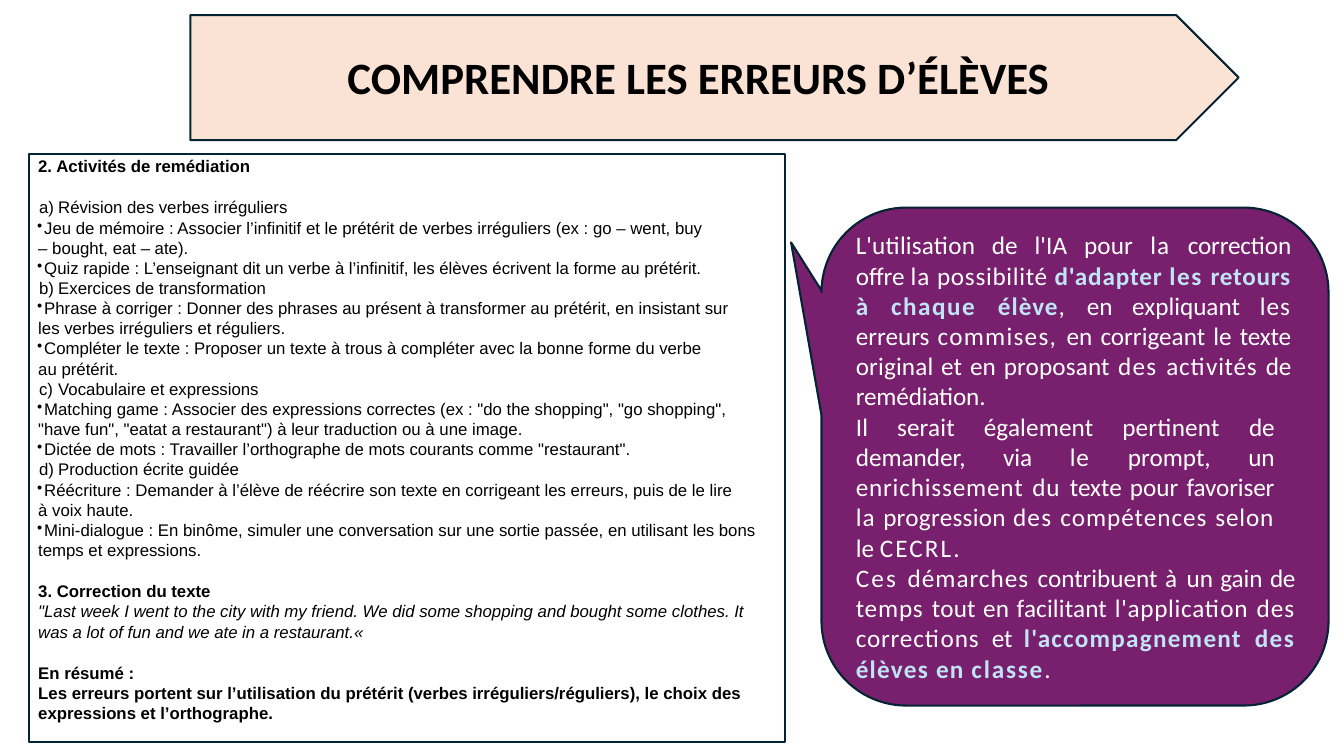
from lxml.etree import SubElement
from pptx import Presentation
from pptx.dml.color import RGBColor
from pptx.enum.shapes import MSO_SHAPE
from pptx.enum.text import MSO_ANCHOR, MSO_AUTO_SIZE, PP_ALIGN
from pptx.oxml.ns import qn
from pptx.util import Pt

COLOURS = {
    "ink": "000000", "outline": "042333", "peach": "FAE2D5",
    "purple": "781F6D", "white": "FFFFFF", "sky": "C1E4F5",
}

# Left panel: (kind, text, space before, right margin, number or letter position)
ACTIVITIES = [
    ("section", "Activités de remédiation", 0, 0, 2),
    ("letter", "Révision des verbes irréguliers", 15, 0, 1),
    ("bullet", "Jeu de mémoire : Associer l’infinitif et le prétérit de verbes irréguliers "
               "(ex : go – went, buy – bought, eat – ate).", 0, 44, 0),
    ("bullet", "Quiz rapide : L’enseignant dit un verbe à l’infinitif, les élèves écrivent "
               "la forme au prétérit.", 0, 0, 0),
    ("letter", "Exercices de transformation", 0, 0, 2),
    ("bullet", "Phrase à corriger : Donner des phrases au présent à transformer au prétérit, "
               "en insistant sur les verbes irréguliers et réguliers.", 0, 24, 0),
    ("bullet", "Compléter le texte : Proposer un texte à trous à compléter avec la bonne "
               "forme du verbe au prétérit.", 0, 44, 0),
    ("letter", "Vocabulaire et expressions", 0, 0, 3),
    ("bullet", "Matching game : Associer des expressions correctes (ex : \"do the shopping\", "
               "\"go shopping\", \"have fun\", \"eatat a restaurant\") à leur traduction ou à "
               "une image.", 0, 18, 0),
    ("bullet", "Dictée de mots : Travailler l’orthographe de mots courants comme "
               "\"restaurant\".", 0, 0, 0),
    ("letter", "Production écrite guidée", 0, 0, 4),
    ("bullet", "Réécriture : Demander à l’élève de réécrire son texte en corrigeant les "
               "erreurs, puis de le lire à voix haute.", 0, 24, 0),
    ("bullet", "Mini-dialogue : En binôme, simuler une conversation sur une sortie passée, "
               "en utilisant les bons temps et expressions.", 0, 0, 0),
    ("bold", "3. Correction du texte", 15, 0, 0),
    ("italic", "\"Last week I went to the city with my friend. We did some shopping and bought "
               "some clothes. It was a lot of fun and we ate in a restaurant.«", 0, 0, 0),
    ("bold", "En résumé :", 15, 0, 0),
    ("bold", "Les erreurs portent sur l’utilisation du prétérit (verbes irréguliers/réguliers), "
             "le choix des expressions et l’orthographe.", 0, 0, 0),
]

# Callout: (right margin, [(text, letter spacing, highlighted)])
BENEFITS = [
    (3, [("L'utilisation de l'IA pour ", 0.1, False), ("la ", 0.7, False),
         ("correction ", -0.1, False), ("offre ", 0, False), ("la ", 0.7, False),
         ("possibilité ", 0.5, False), ("d'adapter ", 0.6, True), ("les ", 1.2, True),
         ("retours ", 0.5, True), ("à chaque ", 1.1, True), ("élève", 0.7, True),
         (", ", 0.7, False), ("en expliquant ", 0, False), ("les ", 0.7, False),
         ("erreurs ", 0, False), ("commises, ", 0.9, False),
         ("en corrigeant le ", 0, False), ("texte ", -0.1, False),
         ("original et en proposant ", 0.1, False), ("des ", 0.9, False),
         ("activités ", 0.5, False), ("de ", -0.2, False), ("remédiation.", -0.1, False)]),
    (15, [("Il serait également pertinent ", 0.1, False), ("de ", -0.2, False),
          ("demander, via ", 0, False), ("le ", 0.5, False), ("prompt, ", 0, False),
          ("un ", -0.2, False), ("enrichissement du ", 0.6, False),
          ("texte pour ", 0, False), ("favoriser ", -0.1, False), ("la ", 0.7, False),
          ("progression ", 0.2, False), ("des ", 0.9, False),
          ("compétences ", 0.7, False), ("selon ", 0.6, False), ("le ", 0, False),
          ("CECRL.", 1.5, False)]),
    (0, [("Ces ", 1.6, False), ("démarches ", 0.7, False), ("contribuent ", 0, False),
         ("à ", 0.8, False), ("un gain ", 0, False), ("de ", -0.2, False),
         ("temps ", 0.6, False), ("tout en facilitant ", 0.1, False),
         ("l'application ", 0.5, False), ("des ", 0.7, False),
         ("corrections ", 0.6, False), ("et ", 0, False),
         ("l'accompagnement ", 0.9, True), ("des ", 1, True), ("élèves ", 0.9, True),
         ("en ", 0.8, True), ("classe", 1.3, True), (".", 1.3, False)]),
]


def colour(name):
    return RGBColor.from_string(COLOURS[name])


def add_outlined_shape(page, kind, left, top, width, height, fill=None):
    shape = page.shapes.add_shape(kind, Pt(left), Pt(top), Pt(width), Pt(height))
    shape.shadow.inherit = False
    if fill:
        shape.fill.solid()
        shape.fill.fore_color.rgb = colour(fill)
    else:
        shape.fill.background()
    shape.line.color.rgb = colour("outline")
    shape.line.width = Pt(1.5)
    return shape


def prepare_frame(frame, top_inset):
    frame.word_wrap = True
    frame.auto_size = MSO_AUTO_SIZE.NONE
    frame.vertical_anchor = MSO_ANCHOR.TOP
    frame.margin_left = frame.margin_right = frame.margin_bottom = 0
    frame.margin_top = Pt(top_inset)


def add_text_box(page, left, top, width, height):
    box = page.shapes.add_textbox(Pt(left), Pt(top), Pt(width), Pt(height))
    prepare_frame(box.text_frame, 2)
    return box.text_frame


def add_para(frame, index, left=0.7, hanging=0.0, right=0):
    para = frame.paragraphs[0] if index == 0 else frame.add_paragraph()
    properties = para._p.get_or_add_pPr()
    for name, value in (("marL", left), ("marR", right), ("indent", -hanging)):
        properties.set(name, str(Pt(value)))
    return para


def add_span(para, text, font, size, ink, bold=False, italic=False, spacing=0):
    span = para.add_run()
    span.text = text
    span.font.name = font
    span.font.size = Pt(size)
    span.font.bold = bold
    span.font.italic = italic
    span.font.color.rgb = colour(ink)
    if spacing:
        span.font._element.set("spc", str(round(spacing * 100)))


def add_marker(para, kind, start, tab):
    properties = para._p.get_or_add_pPr()
    if kind == "bullet":
        SubElement(properties, qn("a:buSzPct"), val="92000")
        SubElement(properties, qn("a:buChar"), char="•")
    else:
        scheme = "arabicPeriod" if kind == "section" else "alphaLcParenR"
        SubElement(properties, qn("a:buAutoNum"), type=scheme, startAt=str(start))
    tabs = SubElement(properties, qn("a:tabLst"))
    SubElement(tabs, qn("a:tab"), pos=str(Pt(tab)), algn="l")


def add_title(page):
    banner = add_outlined_shape(page, MSO_SHAPE.PENTAGON, 136, 10.8, 748.8, 89.3, "peach")
    title = page.shapes.title
    title.left, title.top, title.width, title.height = Pt(218), Pt(14.4), Pt(562), Pt(79)
    banner.element.addnext(title.element)
    prepare_frame(title.text_frame, 21)
    para = add_para(title.text_frame, 0, left=30.2)
    para.alignment = PP_ALIGN.LEFT
    add_span(para, "COMPRENDRE LES ERREURS D’ÉLÈVES", "Calibri", 32, "ink", bold=True)


def add_activities(page):
    add_outlined_shape(page, MSO_SHAPE.RECTANGLE, 20.9, 110.2, 540, 419.8)
    frame = add_text_box(page, 26.6, 109.4, 526.3, 405.4)
    indents = {"section": (13.7, 13), "letter": (15, 13.7), "bullet": (0.7, 0.7)}
    for index, (kind, text, before, right, start) in enumerate(ACTIVITIES):
        left, hanging = indents.get(kind, (0.7, 0))
        para = add_para(frame, index, left, hanging, right)
        if kind in indents:
            add_marker(para, kind, start, 5 if kind == "bullet" else left)
        para.line_spacing = Pt(14.4)
        para.space_before = Pt(before)
        add_span(para, "\t" + text if kind == "bullet" else text, "Arial", 12, "ink",
                 bold=kind in ("section", "bold"), italic=kind == "italic")


def add_benefits(page):
    callout = add_outlined_shape(page, MSO_SHAPE.ROUNDED_RECTANGULAR_CALLOUT,
                                 586.8, 148.3, 362.2, 355.7, "purple")
    for index, value in enumerate((-0.56, -0.43, 0.17)):
        callout.adjustments[index] = value
    frame = add_text_box(page, 610.6, 162, 314.6, 326.2)
    for index, (right, spans) in enumerate(BENEFITS):
        para = add_para(frame, index, right=right)
        para.alignment = PP_ALIGN.JUSTIFY
        para.line_spacing = Pt(21.6)
        for text, spacing, highlighted in spans:
            add_span(para, text, "Calibri", 18, "sky" if highlighted else "white",
                     bold=highlighted, spacing=spacing)


def main():
    deck = Presentation()
    deck.slide_width, deck.slide_height = Pt(960), Pt(540)
    page = deck.slides.add_slide(deck.slide_layouts[5])
    add_activities(page)
    add_title(page)
    add_benefits(page)
    deck.save("out.pptx")


if __name__ == "__main__":
    main()
